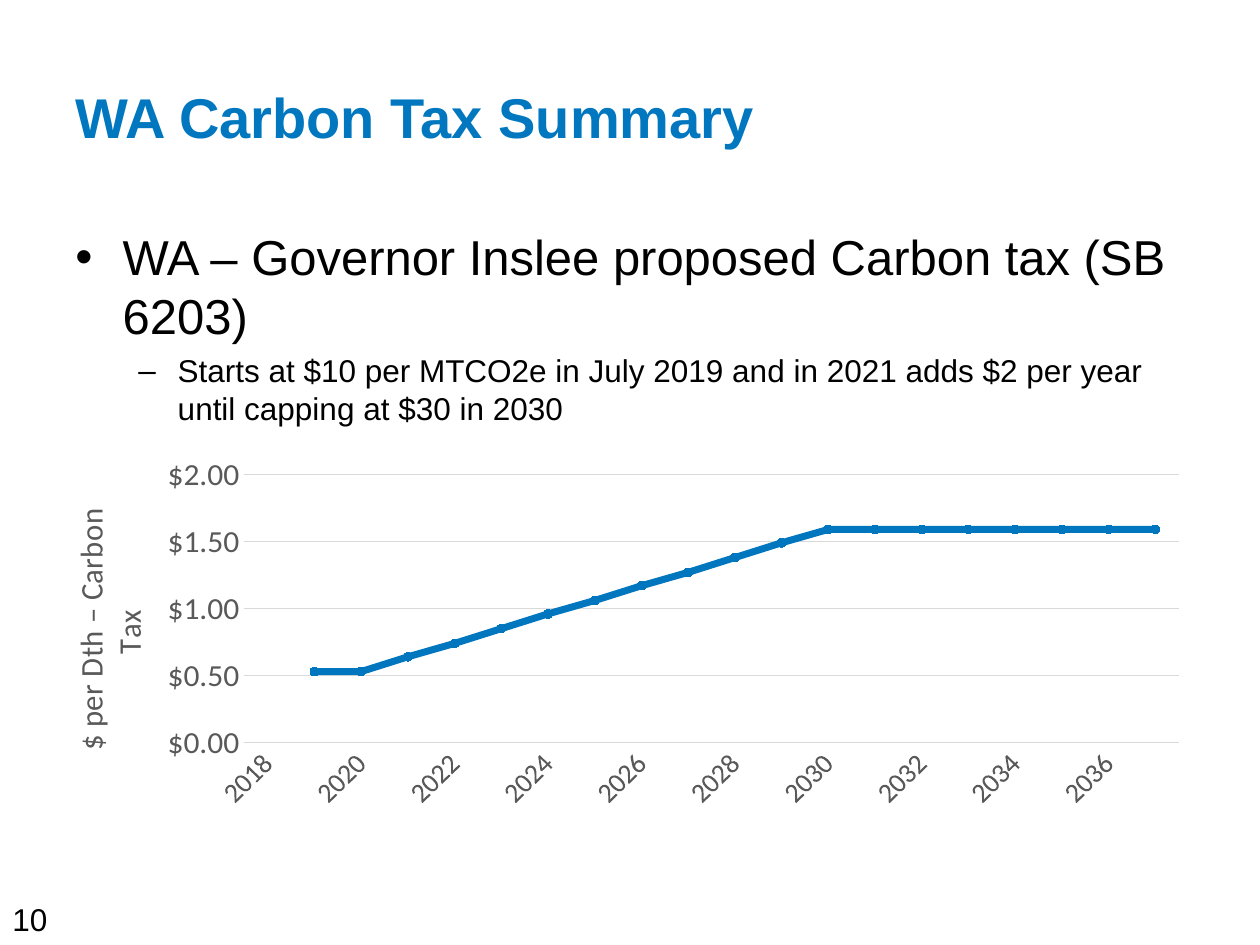
from lxml import etree
from pptx import Presentation
from pptx.chart.data import CategoryChartData
from pptx.dml.color import RGBColor
from pptx.enum.chart import XL_CHART_TYPE, XL_MARKER_STYLE, XL_TICK_MARK
from pptx.enum.text import MSO_ANCHOR
from pptx.oxml.ns import qn
from pptx.util import Pt

LINE = XL_CHART_TYPE.LINE_MARKERS
DOT = XL_MARKER_STYLE.CIRCLE
NO_TICK = XL_TICK_MARK.NONE
MIDDLE = MSO_ANCHOR.MIDDLE
TOP = MSO_ANCHOR.TOP

BLUE, BLACK, GREY, RULE = "0077BE", "000000", "595959", "D9D9D9"
YEARS = range(2018, 2038)
TAX = [None, 0.53, 0.53, 0.64, 0.74, 0.85, 0.96, 1.06, 1.17, 1.27, 1.38, 1.49] + [1.59] * 8


def rgb(code):
    return RGBColor.from_string(code)


def style(font, color, **form):
    for key, value in form.items():
        setattr(font, key, value)
    font.color.rgb = rgb(color)


def add_box(slide, place, anchor=TOP):
    box = slide.shapes.add_textbox(*map(Pt, place))
    frame = box.text_frame
    frame.word_wrap = True
    frame.vertical_anchor = anchor
    return frame


def write(para, text, size, color=BLACK, bold=False):
    para.text = text
    style(para.font, color, name="Arial", size=Pt(size), bold=bold)


def add_bullet(para, mark, left, hang):
    props = para._p.get_or_add_pPr()
    props.set("marL", str(Pt(left)))
    props.set("indent", str(Pt(-hang)))
    etree.SubElement(props, qn("a:buFont")).set("typeface", "Arial")
    etree.SubElement(props, qn("a:buChar")).set("char", mark)


def add_body(slide):
    frame = add_box(slide, (36, 126, 648, 326))
    first = frame.paragraphs[0]
    add_bullet(first, "•", 27, 27)
    write(first, "WA – Governor Inslee proposed Carbon tax (SB 6203)", 28)
    second = frame.add_paragraph()
    add_bullet(second, "–", 58.5, 22.5)
    second.level = 1
    second.space_before = Pt(4)
    write(second, "Starts at $10 per MTCO2e in July 2019 and in 2021 adds "
          "$2 per year until capping at $30 in 2030", 18)


def set_line(line, color, width):
    line.color.rgb = rgb(color)
    line.width = Pt(width)


def set_axis(axis, size):
    axis.major_tick_mark = axis.minor_tick_mark = NO_TICK
    style(axis.tick_labels.font, GREY, name="Calibri", size=Pt(size))


def place_plot(chart, **bounds):
    """Fix the inner plot area, as fractions of the chart."""
    area = chart._chartSpace.chart.plotArea
    for old in area.findall(qn("c:layout")):
        area.remove(old)
    layout = etree.Element(qn("c:layout"))
    area.insert(0, layout)
    manual = etree.SubElement(layout, qn("c:manualLayout"))
    rules = {"layoutTarget": "inner", "xMode": "edge", "yMode": "edge", **bounds}
    for tag, value in rules.items():
        etree.SubElement(manual, qn("c:" + tag)).set("val", str(value))


def add_graph(slide):
    data = CategoryChartData()
    data.categories = [str(year) for year in YEARS]
    data.add_series("Series 1", TAX)
    chart = slide.shapes.add_chart(LINE, Pt(36), Pt(260.5), Pt(648), Pt(214), data).chart
    chart.has_legend = chart.has_title = False
    style(chart.font, BLACK, name="Calibri", size=Pt(10))
    place_plot(chart, x=0.16, y=0.025, w=0.824, h=0.735)

    years = chart.category_axis
    set_axis(years, 16)
    set_line(years.format.line, RULE, 0.75)
    years._element.find(qn("c:txPr")).find(qn("a:bodyPr")).set("rot", "-2700000")

    costs = chart.value_axis
    set_axis(costs, 18)
    costs.minimum_scale, costs.maximum_scale, costs.major_unit = 0, 2, 0.5
    costs.format.line.fill.background()
    set_line(costs.major_gridlines.format.line, RULE, 0.75)
    costs.tick_labels.number_format = '"$"#,##0.00'
    costs.tick_labels.number_format_is_linked = False
    frame = costs.axis_title.text_frame
    frame.text = "$ per Dth – Carbon Tax"
    style(frame.paragraphs[0].runs[0].font, GREY, name="Calibri", size=Pt(18), bold=False)
    body = frame._txBody.find(qn("a:bodyPr"))
    body.set("rot", "-5400000")
    body.set("vert", "horz")

    plot = chart.plots[0]
    plot.vary_by_categories = False
    tax = plot.series[0]
    tax.smooth = False
    set_line(tax.format.line, "0076BE", 4)
    tax.format.line._get_or_add_ln().set("cap", "rnd")
    mark = tax.marker
    mark.style, mark.size = DOT, 5
    mark.format.fill.solid()
    mark.format.fill.fore_color.rgb = rgb("0076BE")
    set_line(mark.format.line, "0076BE", 0.75)


def main():
    deck = Presentation()
    deck.slide_width, deck.slide_height = Pt(720), Pt(540)
    slide = deck.slides.add_slide(deck.slide_layouts[6])
    title = add_box(slide, (36, 21.6, 648, 90), MIDDLE)
    write(title.paragraphs[0], "WA Carbon Tax Summary", 32, BLUE, True)
    add_body(slide)
    number = add_box(slide, (0, 511, 168, 29))
    write(number.paragraphs[0], "10", 18)
    add_graph(slide)
    deck.save("out.pptx")


if __name__ == "__main__":
    main()
